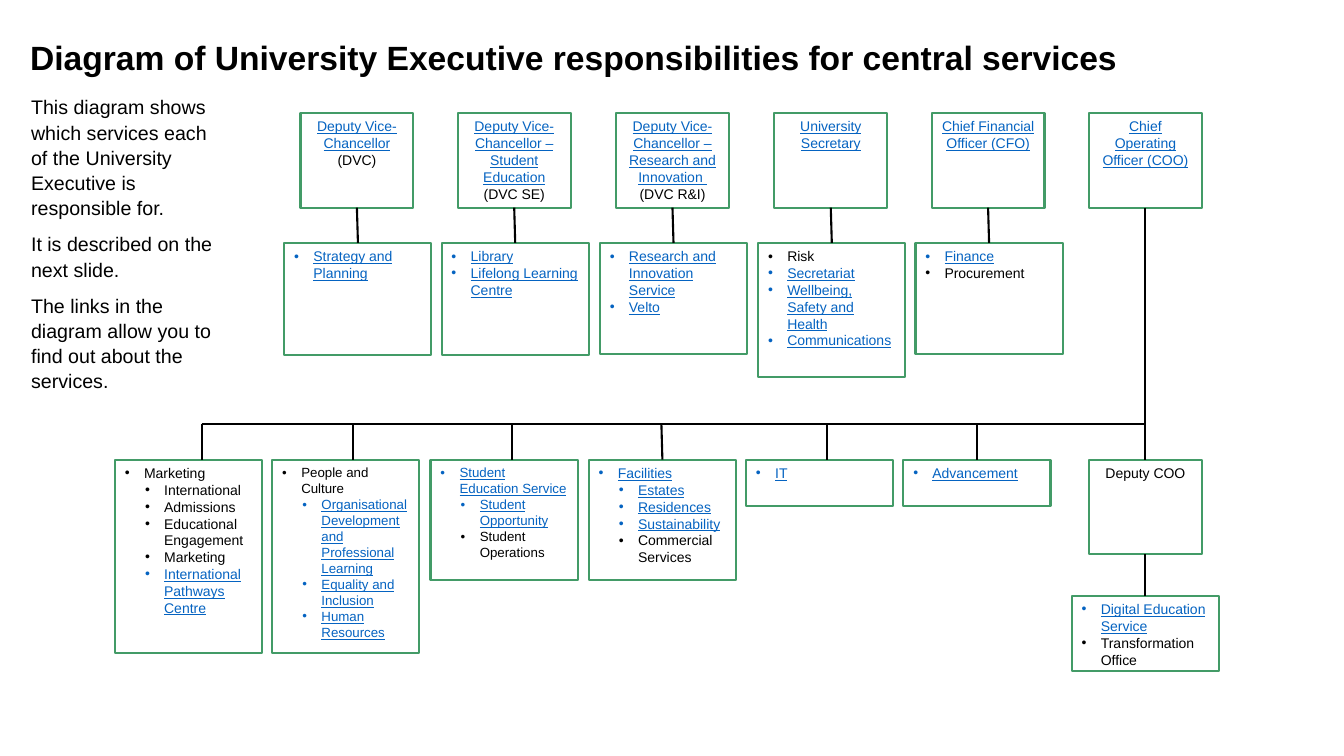
from pptx import Presentation
from pptx.dml.color import RGBColor
from pptx.enum.shapes import MSO_CONNECTOR as Connector, MSO_SHAPE as Shape
from pptx.enum.text import MSO_ANCHOR as Anchor, PP_ALIGN as Align
from pptx.oxml.ns import qn
from pptx.util import Pt
from lxml.etree import SubElement

PX = 9144
BLACK = RGBColor(0x00, 0x00, 0x00)
LINK_BLUE = RGBColor(0x05, 0x63, 0xC1)
GREEN = RGBColor(0x43, 0x9B, 0x67)

COLUMN_PITCH = 156.5
ROLE_WIDTH, ROLE_HEIGHT = 112, 94
LIST_WIDTH = 146
ROLE_TOP, SERVICE_TOP, BUS_TOP, UNIT_TOP = 112, 241, 421, 456
BOTTOM, TOP = 2, 0

HEADING = "Diagram of University Executive responsibilities for central services"
INTRODUCTION = [
    "This diagram shows which services each of the University Executive is responsible for.",
    "It is described on the next slide.",
    "The links in the diagram allow you to find out about the services.",
]
OFFICERS = [
    ("Deputy Vice-Chancellor ", "(DVC)"),
    ("Deputy Vice-Chancellor – Student Education ", "(DVC SE)"),
    ("Deputy Vice-Chancellor – Research and Innovation \v", "(DVC R&I)"),
    ("University Secretary", ""),
    ("Chief Financial Officer (CFO)", ""),
    ("Chief Operating Officer (COO)", ""),
]
SERVICES = [
    (111, [("Strategy and Planning", 0, LINK_BLUE)]),
    (111, [("Library", 0, LINK_BLUE), ("Lifelong Learning Centre", 0, LINK_BLUE)]),
    (110, [("Research and Innovation Service", 0, LINK_BLUE), ("Velto", 0, LINK_BLUE)]),
    (133, [("Risk", 0, BLACK), ("Secretariat", 0, LINK_BLUE),
           ("Wellbeing, Safety and Health", 0, LINK_BLUE),
           ("Communications", 0, LINK_BLUE)]),
    (110, [("Finance", 0, LINK_BLUE), ("Procurement", 0, BLACK)]),
]
UNITS = [
    (200, 192, 10, [("Marketing", 0, BLACK), ("International", 1, BLACK),
                    ("Admissions", 1, BLACK), ("Educational Engagement", 1, BLACK),
                    ("Marketing", 1, BLACK),
                    ("International Pathways Centre", 1, LINK_BLUE)]),
    (350, 192, 9.5, [("People and Culture", 0, BLACK),
                     ("Organisational Development and Professional Learning", 1, LINK_BLUE),
                     ("Equality and Inclusion", 1, LINK_BLUE),
                     ("Human Resources", 1, LINK_BLUE)]),
    (508, 119, 9.5, [("Student Education Service", 0, LINK_BLUE),
                     ("Student Opportunity", 1, LINK_BLUE),
                     ("Student Operations", 1, BLACK)]),
    (656, 119, 10, [("Facilities", 0, LINK_BLUE), ("Estates", 1, LINK_BLUE),
                    ("Residences", 1, LINK_BLUE), ("Sustainability", 1, LINK_BLUE),
                    ("Commercial Services", 1, BLACK)]),
    (820, 46, 10, [("IT", 0, LINK_BLUE)]),
    (969, 46, 10, [("Advancement", 0, LINK_BLUE)]),
]
DEPUTY_SERVICES = [("Digital Education Service", 0, LINK_BLUE),
                   ("Transformation Office", 0, BLACK)]


class ChartSlide:
    """Draws the parts of an organisation chart in one style on one slide."""

    font_name = "Arial"
    line_width = Pt(1.5)

    def __init__(self, slide):
        self.slide = slide

    def style(self, runs, size, color=BLACK, bold=False):
        for run in runs:
            run.font.name = self.font_name
            run.font.size = Pt(size)
            run.font.bold = bold
            run.font.underline = color == LINK_BLUE
            run.font.color.rgb = color

    def text(self, left, top, width, height, paragraphs, size,
             spacing, after, anchor=Anchor.TOP, bold=False):
        box = self.slide.shapes.add_textbox(left * PX, top * PX, width * PX, height * PX)
        frame = box.text_frame
        frame.word_wrap = True
        frame.vertical_anchor = anchor
        frame.text = "\n".join(paragraphs)
        for paragraph in frame.paragraphs:
            paragraph.line_spacing = spacing
            paragraph.space_after = Pt(after)
            self.style(paragraph.runs, size, bold=bold)

    def box(self, left, top, width, height):
        box = self.slide.shapes.add_shape(
            Shape.RECTANGLE, left * PX, top * PX, width * PX, height * PX)
        box.shadow.inherit = False
        box.fill.background()
        box.line.color.rgb = GREEN
        box.line.width = self.line_width
        box.text_frame.word_wrap = True
        box.text_frame.vertical_anchor = Anchor.TOP
        return box

    def role(self, left, top, linked, plain):
        box = self.box(left, top, ROLE_WIDTH, ROLE_HEIGHT)
        paragraph = box.text_frame.paragraphs[0]
        paragraph.alignment = Align.CENTER
        if linked:
            paragraph.text = linked
            self.style(paragraph.runs, 10, LINK_BLUE)
        if plain:
            suffix = paragraph.add_run()
            suffix.text = plain
            self.style([suffix], 10)
        return box

    def bullets(self, left, top, height, items, size=10):
        box = self.box(left, top, LIST_WIDTH, height)
        frame = box.text_frame
        frame.text = "\n".join(label for label, level, color in items)
        for paragraph, (label, level, color) in zip(frame.paragraphs, items):
            paragraph.alignment = Align.LEFT
            paragraph.level = level
            properties = paragraph._p.get_or_add_pPr()
            properties.set("marL", str((19 + 20 * level) * PX))
            properties.set("indent", str(-19 * PX))
            SubElement(properties, qn("a:buFont")).set("typeface", self.font_name)
            SubElement(properties, qn("a:buChar")).set("char", "•")
            self.style(paragraph.runs, size, color)
        return box

    def line(self, x1, y1, x2, y2):
        line = self.slide.shapes.add_connector(
            Connector.STRAIGHT, x1 * PX, y1 * PX, x2 * PX, y2 * PX)
        line.line.color.rgb = BLACK
        line.line.width = self.line_width
        SubElement(line._element.spPr, qn("a:effectLst"))
        return line

    def join(self, upper, lower):
        line = self.line(0, 0, 0, 0)
        line.begin_connect(upper, BOTTOM)
        line.end_connect(lower, TOP)


def main():
    deck = Presentation()
    deck.slide_width, deck.slide_height = 1333 * PX, 750 * PX
    chart = ChartSlide(deck.slides.add_slide(deck.slide_layouts[6]))

    chart.text(20, 34, 1246, 37, [HEADING], 24, 1.2, 6, Anchor.MIDDLE, True)
    chart.text(21, 88, 209, 308, INTRODUCTION, 14, 1.07, 8)

    officers = [chart.role(round(298 + COLUMN_PITCH * column), ROLE_TOP, title, suffix)
                for column, (title, suffix) in enumerate(OFFICERS)]
    for column, (height, items) in enumerate(SERVICES):
        left = round(282 + COLUMN_PITCH * column)
        services = chart.bullets(left, SERVICE_TOP, height, items)
        chart.join(officers[column], services)

    for column, (drop, height, size, items) in enumerate(UNITS):
        left = round(114 + COLUMN_PITCH * column)
        unit = chart.bullets(left, UNIT_TOP, height, items, size)
        branch = chart.line(drop, BUS_TOP, drop, UNIT_TOP)
        if abs(left + LIST_WIDTH // 2 - drop) <= 1:
            branch.end_connect(unit, TOP)

    deputy = chart.role(1080, UNIT_TOP, "", "Deputy COO")
    deputy_services = chart.bullets(1063, 591, 75, DEPUTY_SERVICES)
    chart.join(officers[-1], deputy)
    chart.join(deputy, deputy_services)
    chart.line(UNITS[0][0], BUS_TOP, 1136, BUS_TOP)

    deck.save("out.pptx")


if __name__ == "__main__":
    main()
